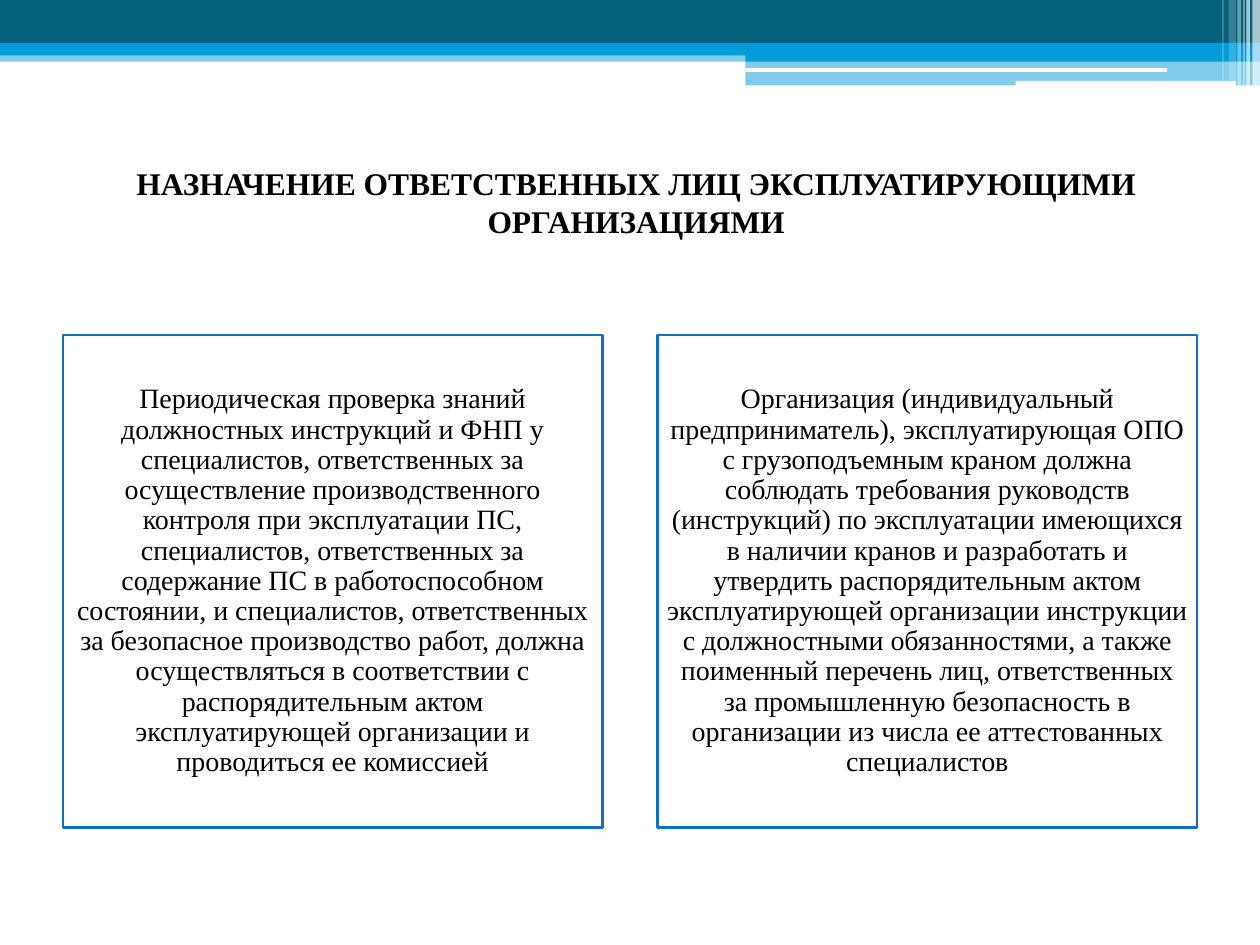
from lxml import etree
from pptx import Presentation
from pptx.dml.color import RGBColor
from pptx.enum import shapes, text
from pptx.oxml.ns import qn
from pptx.util import Pt

WHITE = RGBColor(0xFF, 0xFF, 0xFF)
BLACK = RGBColor(0, 0, 0)
TEAL = RGBColor(0x04, 0x61, 0x7B)
SKY = RGBColor(0x00, 0x9D, 0xD9)
BLUE = RGBColor(0x0F, 0x6F, 0xC6)
FONT = "Times New Roman"
RECT = shapes.MSO_SHAPE.RECTANGLE
ROUNDED = shapes.MSO_SHAPE.ROUNDED_RECTANGLE

TITLE = "НАЗНАЧЕНИЕ ОТВЕТСТВЕННЫХ ЛИЦ ЭКСПЛУАТИРУЮЩИМИ ОРГАНИЗАЦИЯМИ"
CARDS = [
    "Периодическая проверка знаний должностных инструкций и ФНП у специалистов, "
    "ответственных за осуществление производственного контроля при эксплуатации ПС, "
    "специалистов, ответственных за содержание ПС в работоспособном состоянии, "
    "и специалистов, ответственных за безопасное производство работ, должна "
    "осуществляться в соответствии с распорядительным актом эксплуатирующей "
    "организации и проводиться ее комиссией",
    "Организация (индивидуальный предприниматель), эксплуатирующая ОПО с "
    "грузоподъемным краном должна соблюдать требования руководств (инструкций) по "
    "эксплуатации имеющихся в наличии кранов и разработать и утвердить "
    "распорядительным актом эксплуатирующей организации инструкции с должностными "
    "обязанностями, а также поименный перечень лиц, ответственных за промышленную "
    "безопасность в организации из числа ее аттестованных специалистов",
]


def add_block(page, box, color, opacity=100, kind=RECT):
    block = page.shapes.add_shape(kind, *(Pt(length) for length in box))
    block.shadow.inherit = False
    block.fill.solid()
    block.fill.fore_color.rgb = color
    block.line.fill.background()
    if opacity < 100:
        tint = block.fill._xPr.find(".//" + qn("a:srgbClr"))
        etree.SubElement(tint, qn("a:alpha")).set("val", str(opacity * 1000))
    return block


def write_text(frame, words, size, bold=False):
    frame.text = words
    frame.word_wrap = True
    frame.auto_size = text.MSO_AUTO_SIZE.NONE
    frame.vertical_anchor = text.MSO_ANCHOR.MIDDLE
    para = frame.paragraphs[0]
    para.alignment = text.PP_ALIGN.CENTER
    font = para.runs[0].font
    font.name, font.size, font.bold = FONT, Pt(size), bold
    font.color.rgb = BLACK
    return para


def add_header(page, left, top, width):
    right = left + width
    step = left + 426
    add_block(page, (left, top + 28.8, width, 6.48), SKY, 50)
    add_block(page, (left, top, width, 24.48), TEAL)
    add_block(page, (left, top + 24.48, width, 7.2), SKY)
    add_block(page, (step, top + 28, right - step, 7.2), SKY)
    add_block(page, (step, top + 35.2, right - step, 13.6), SKY, 50)
    add_block(page, (step, top + 39, 241, 2.16), WHITE, kind=ROUNDED)
    add_block(page, (left + 580.4, top + 46.2, 126, 2.8), WHITE, kind=ROUNDED)
    stripes = [(4.4, 4.4, 49, 65), (7.8, 2, 49, 65), (9.5, 0.72, 49, 60),
               (12.9, 2, 49, 40), (17.9, 4.3, 46, 20), (21.5, 0.72, 46, 30)]
    for offset, stripe_width, height, opacity in stripes:
        add_block(page, (right - offset, top, stripe_width, height), WHITE, opacity)


def add_title(page, left, top, width, height):
    title = page.shapes.title
    title.left, title.top = Pt(left), Pt(top)
    title.width, title.height = Pt(width), Pt(height)
    write_text(title.text_frame, TITLE, 18, bold=True)


def add_cards(page, left, top, width, height, gap=31.7):
    card_width = (width - gap * (len(CARDS) - 1)) / len(CARDS)
    for index, words in enumerate(CARDS):
        card_left = left + index * (card_width + gap)
        card = add_block(page, (card_left, top, card_width, height), WHITE)
        card.line.color.rgb = BLUE
        card.line.width = Pt(1.5)
        frame = card.text_frame
        frame.margin_left = frame.margin_right = Pt(5)
        frame.margin_top = frame.margin_bottom = Pt(5)
        write_text(frame, words, 16).line_spacing = 0.9


def main():
    deck = Presentation()
    deck.slide_width, deck.slide_height = Pt(720), Pt(540)
    page = deck.slides.add_slide(deck.slide_layouts[5])
    add_header(page, 0, 0, 720)
    add_title(page, 39.6, 78.5, 648, 73.4)
    add_cards(page, 36, 191.4, 648, 281.4)
    deck.save("out.pptx")


if __name__ == "__main__":
    main()
